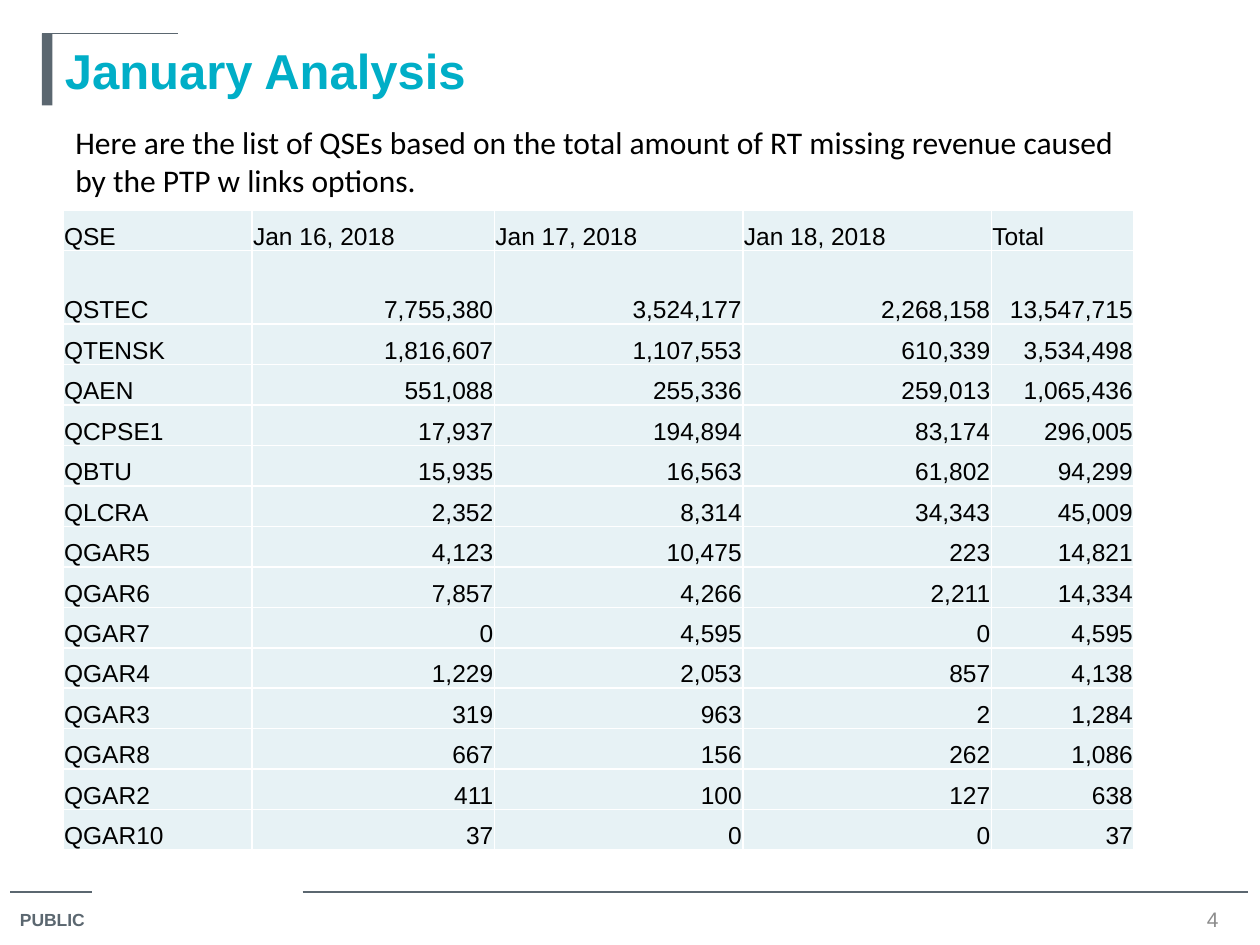
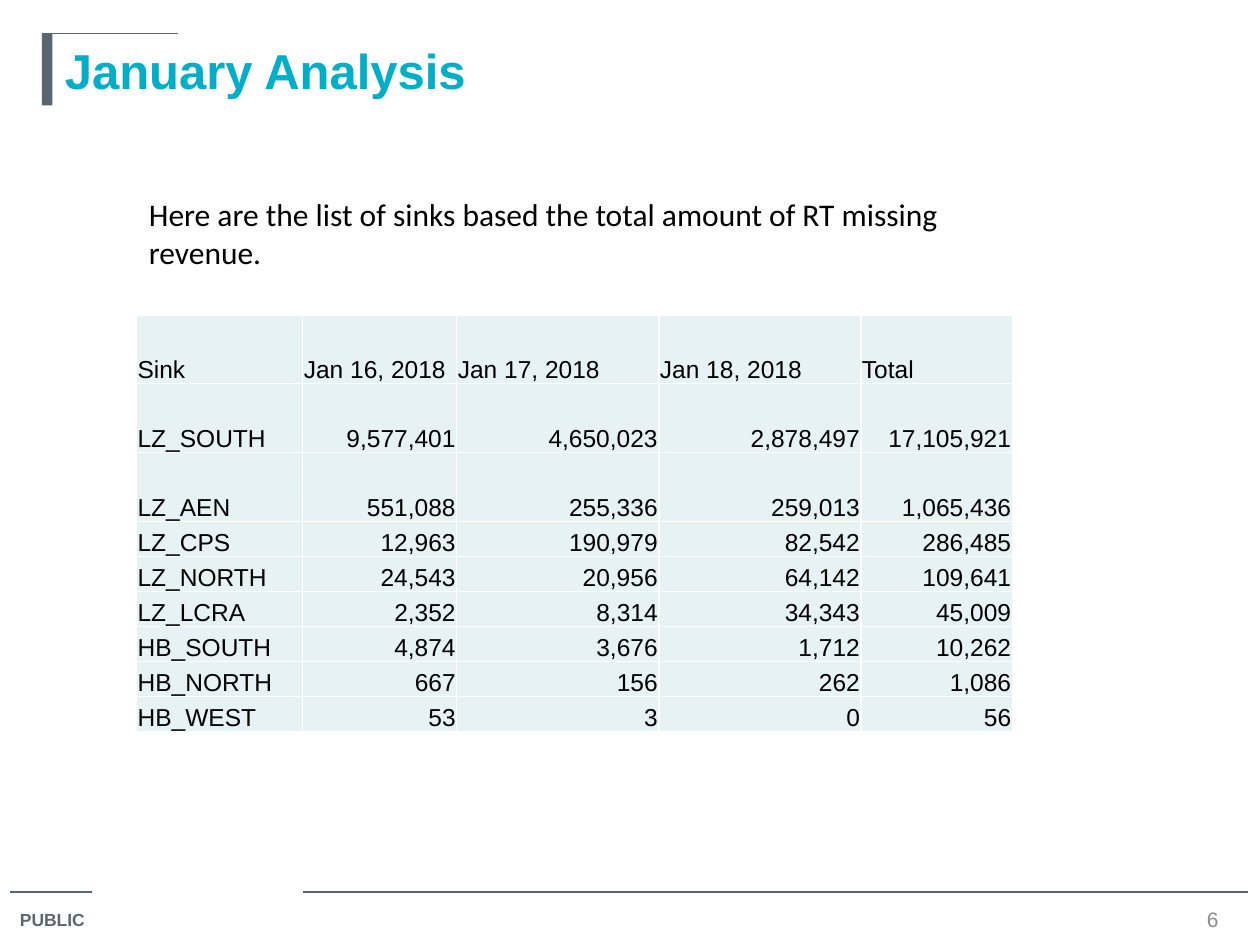
from dataclasses import dataclass

from lxml.etree import SubElement
from pptx import Presentation
from pptx.dml.color import RGBColor
from pptx.enum.shapes import MSO_CONNECTOR, MSO_SHAPE
from pptx.enum.text import MSO_ANCHOR, PP_ALIGN
from pptx.oxml.ns import qn
from pptx.slide import Slide
from pptx.util import Pt

SLATE = RGBColor(0x5B, 0x67, 0x70)
TEAL = RGBColor(0x00, 0xAE, 0xC7)
GREY = RGBColor(0x8C, 0x8C, 0x8C)
PALE = RGBColor(0xE7, 0xF2, 0xF5)
BLACK = RGBColor(0, 0, 0)
WHITE = RGBColor(0xFF, 0xFF, 0xFF)

DAYS = ["Jan 16, 2018", "Jan 17, 2018", "Jan 18, 2018"]
FOOTER_Y = 509.8
BAR_X, BAR_Y, BAR_H = 24, 19.3, 41
# Start x, end x, y of each thin rule
RULES = [(6, 52.5, FOOTER_Y), (173, 713, FOOTER_Y), (BAR_X, 102, BAR_Y)]


@dataclass(frozen=True)
class Style:
    size: float
    color: RGBColor
    font: str = "Arial"
    bold: bool = False
    align: PP_ALIGN = PP_ALIGN.LEFT
    anchor: MSO_ANCHOR = MSO_ANCHOR.TOP


TITLE = Style(28, TEAL, bold=True, anchor=MSO_ANCHOR.MIDDLE)
LABEL = Style(10, SLATE, bold=True)
NUMBER = Style(12, GREY, align=PP_ALIGN.CENTER, anchor=MSO_ANCHOR.MIDDLE)
INTRO = Style(18, BLACK, font="Calibri")
NAME = Style(14, BLACK)
AMOUNT = Style(14, BLACK, align=PP_ALIGN.RIGHT)


@dataclass(frozen=True)
class Analysis:
    page: int
    intro: str
    left: float
    intro_top: float
    table_top: float
    col_widths: list[float]
    row_height: float
    tall_rows: dict[int, float]
    key: str
    rows: list[tuple[str, int, int, int, int]]


ANALYSES = [
    Analysis(
        page=4,
        intro="Here are the list of QSEs based on the total amount of RT missing "
              "revenue caused by the PTP w links options.",
        left=36, intro_top=67, table_top=120,
        col_widths=[108, 138.5, 142, 142, 81.5],
        row_height=23.14, tall_rows={1: 42},
        key="QSE",
        rows=[
            ("QSTEC", 7755380, 3524177, 2268158, 13547715),
            ("QTENSK", 1816607, 1107553, 610339, 3534498),
            ("QAEN", 551088, 255336, 259013, 1065436),
            ("QCPSE1", 17937, 194894, 83174, 296005),
            ("QBTU", 15935, 16563, 61802, 94299),
            ("QLCRA", 2352, 8314, 34343, 45009),
            ("QGAR5", 4123, 10475, 223, 14821),
            ("QGAR6", 7857, 4266, 2211, 14334),
            ("QGAR7", 0, 4595, 0, 4595),
            ("QGAR4", 1229, 2053, 857, 4138),
            ("QGAR3", 319, 963, 2, 1284),
            ("QGAR8", 667, 156, 262, 1086),
            ("QGAR2", 411, 100, 127, 638),
            ("QGAR10", 37, 0, 0, 37),
        ],
    ),
    Analysis(
        page=6,
        intro="Here are the list of sinks based the total amount of RT missing "
              "revenue.",
        left=78, intro_top=108, table_top=180,
        col_widths=[95, 88, 115.5, 115.5, 86.5],
        row_height=20.05, tall_rows={0: 39.3, 1: 39.3, 2: 39.3},
        key="Sink",
        rows=[
            ("LZ_SOUTH", 9577401, 4650023, 2878497, 17105921),
            ("LZ_AEN", 551088, 255336, 259013, 1065436),
            ("LZ_CPS", 12963, 190979, 82542, 286485),
            ("LZ_NORTH", 24543, 20956, 64142, 109641),
            ("LZ_LCRA", 2352, 8314, 34343, 45009),
            ("HB_SOUTH", 4874, 3676, 1712, 10262),
            ("HB_NORTH", 667, 156, 262, 1086),
            ("HB_WEST", 53, 3, 0, 56),
        ],
    ),
]


def write(tf, text: str, style: Style) -> None:
    p = tf.paragraphs[0]
    p.alignment = style.align
    r = p.add_run()
    r.text = text
    r.font.size = Pt(style.size)
    r.font.name = style.font
    r.font.bold = style.bold
    r.font.color.rgb = style.color


def add_text(s: Slide, x: float, y: float, w: float, h: float,
             text: str, style: Style) -> None:
    tf = s.shapes.add_textbox(Pt(x), Pt(y), Pt(w), Pt(h)).text_frame
    tf.word_wrap = True
    tf.vertical_anchor = style.anchor
    write(tf, text, style)


def add_rule(s: Slide, x1: float, x2: float, y: float) -> None:
    ln = s.shapes.add_connector(MSO_CONNECTOR.STRAIGHT, Pt(x1), Pt(y), Pt(x2), Pt(y))
    ln.line.color.rgb = SLATE
    ln.line.width = Pt(0.75)
    SubElement(ln._element.spPr, qn("a:effectLst"))


def add_frame(s: Slide, page: int) -> None:
    # Footer and title ornament
    for rule in RULES:
        add_rule(s, *rule)
    add_text(s, 4.3, 516, 55.5, 20, "PUBLIC", LABEL)
    bar = s.shapes.add_shape(MSO_SHAPE.RECTANGLE, Pt(BAR_X), Pt(BAR_Y), Pt(6), Pt(BAR_H))
    bar.shadow.inherit = False
    bar.fill.solid()
    bar.fill.fore_color.rgb = SLATE
    bar.line.fill.background()
    add_text(s, 30, BAR_Y, 666, BAR_H, "January Analysis", TITLE)
    add_text(s, 672, 517, 42, 17, str(page), NUMBER)


def style_cell(cell) -> None:
    cell.margin_left = cell.margin_right = cell.margin_top = Pt(0.6)
    cell.margin_bottom = Pt(0)
    cell.vertical_anchor = MSO_ANCHOR.BOTTOM
    tc_pr = cell._tc.get_or_add_tcPr()
    for side in ("lnL", "lnR", "lnT", "lnB"):
        ln = SubElement(tc_pr, qn(f"a:{side}"), w=str(Pt(1)))
        fill = SubElement(ln, qn("a:solidFill"))
        SubElement(fill, qn("a:srgbClr"), val=str(WHITE))
    cell.fill.solid()
    cell.fill.fore_color.rgb = PALE


def add_revenue_table(s: Slide, a: Analysis) -> None:
    grid = [(a.key, *DAYS, "Total"), *a.rows]
    heights = [a.tall_rows.get(i, a.row_height) for i in range(len(grid))]
    table = s.shapes.add_table(
        len(grid), len(a.col_widths), Pt(a.left), Pt(a.table_top),
        Pt(sum(a.col_widths)), Pt(sum(heights))).table
    table.first_row = table.horz_banding = False
    for col, width in zip(table.columns, a.col_widths):
        col.width = Pt(width)
    for row, height, values in zip(table.rows, heights, grid):
        row.height = Pt(height)
        for cell, value in zip(row.cells, values):
            style_cell(cell)
            if isinstance(value, int):
                write(cell.text_frame, f"{value:,}", AMOUNT)
            else:
                write(cell.text_frame, value, NAME)


def main() -> None:
    prs = Presentation()
    prs.slide_width, prs.slide_height = Pt(720), Pt(540)
    for a in ANALYSES:
        s = prs.slides.add_slide(prs.slide_layouts[6])
        add_frame(s, a.page)
        add_revenue_table(s, a)
        add_text(s, a.left, a.intro_top, sum(a.col_widths), 51, a.intro, INTRO)
    prs.save("out.pptx")


if __name__ == "__main__":
    main()
